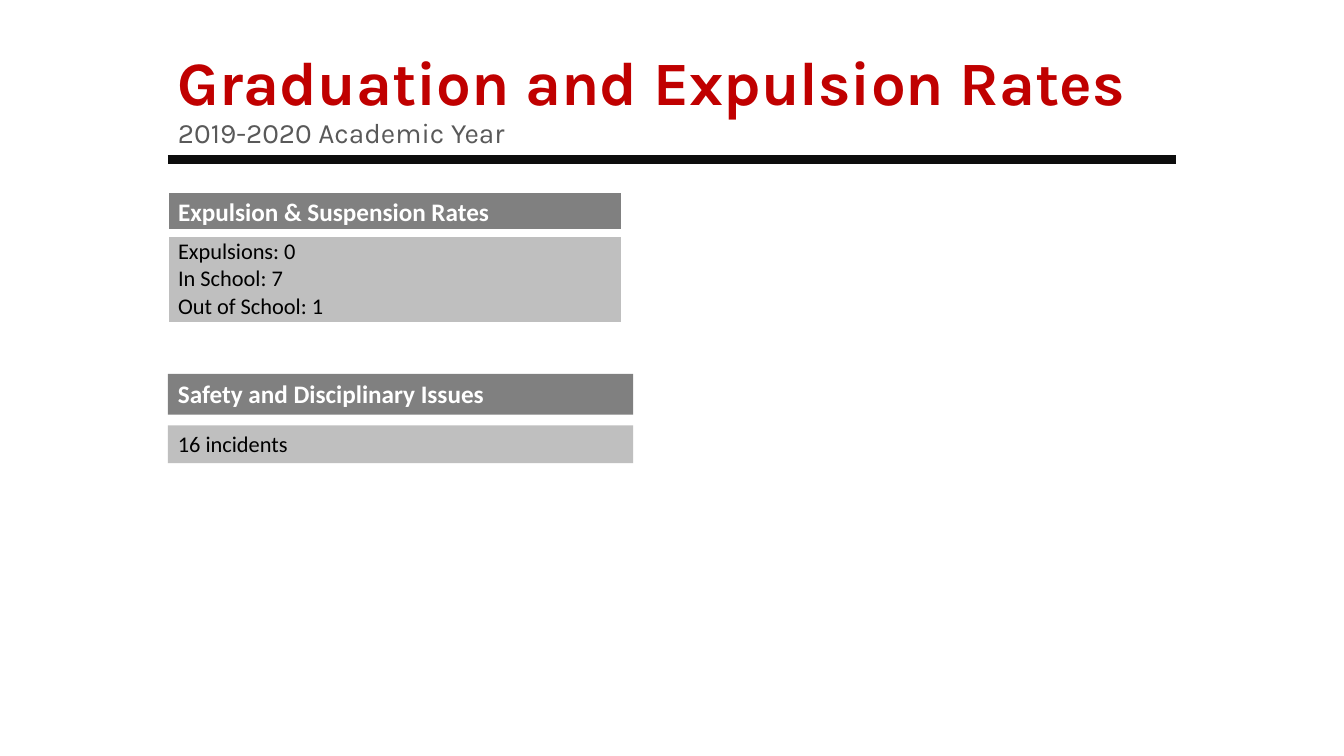
from dataclasses import dataclass

from lxml.etree import SubElement
from pptx import Presentation
from pptx.dml.color import RGBColor
from pptx.enum.shapes import MSO_CONNECTOR as Connector, MSO_SHAPE as Preset
from pptx.enum.text import MSO_ANCHOR as Anchor, MSO_AUTO_SIZE as AutoSize, PP_ALIGN as Align
from pptx.oxml.ns import qn
from pptx.util import Emu, Pt


@dataclass(frozen=True)
class Theme:
    title_font: str = "Karla"
    body_font: str = "Calibri"
    red: str = "C00000"
    gray: str = "595959"
    rule: str = "0D0D0D"
    header_fill: str = "808080"
    body_fill: str = "BFBFBF"
    white: str = "FFFFFF"
    black: str = "000000"
    title_size: int = 44
    subtitle_size: int = 20
    header_size: int = 18
    body_size: int = 16


THEME = Theme()
LEFT = 160


def px(value):
    return Emu(value * 9525)


def color(code):
    return RGBColor.from_string(code)


def write_line(paragraph, text, font, size, code, bold=False):
    paragraph.alignment = Align.LEFT
    run = paragraph.add_run()
    run.text = text
    run.font.name = font
    run.font.size = Pt(size)
    run.font.bold = bold
    run.font.color.rgb = color(code)


def write_lines(frame, lines, is_header):
    for index, text in enumerate(lines):
        paragraph = frame.add_paragraph() if index else frame.paragraphs[0]
        if is_header:
            write_line(paragraph, text, THEME.body_font, THEME.header_size, THEME.white, True)
        else:
            write_line(paragraph, text, THEME.body_font, THEME.body_size, THEME.black)


def band_fill(is_header):
    return color(THEME.header_fill if is_header else THEME.body_fill)


def add_heading(slide, title, subtitle):
    frame = slide.shapes.add_textbox(px(LEFT), px(32), px(936), px(128)).text_frame
    frame.word_wrap = True
    frame.vertical_anchor = Anchor.MIDDLE
    first, second = frame.paragraphs[0], frame.add_paragraph()
    write_line(first, title, THEME.title_font, THEME.title_size, THEME.red, True)
    write_line(second, subtitle, THEME.title_font, THEME.subtitle_size, THEME.gray)
    for paragraph in (first, second):
        paragraph.line_spacing = 0.9


def add_rule(slide, top):
    rule = slide.shapes.add_connector(
        Connector.STRAIGHT, px(LEFT), px(top), px(LEFT + 960), px(top))
    rule.line.color.rgb = color(THEME.rule)
    rule.line.width = Pt(6)
    SubElement(rule.element.spPr, qn("a:effectLst"))


def set_borders(cell, widths):
    properties = cell._tc.get_or_add_tcPr()
    for side, width in widths.items():
        line = SubElement(properties, qn(f"a:ln{side}"), w=str(Pt(width)))
        fill = SubElement(line, qn("a:solidFill"))
        SubElement(fill, qn("a:srgbClr"), val=THEME.white)


def add_rates_table(slide, top, rows):
    heights = (39, 88)
    table = slide.shapes.add_table(
        len(rows), 1, px(LEFT), px(top), px(432), px(sum(heights))).table
    table.horz_banding = False
    for index, (lines, height) in enumerate(zip(rows, heights)):
        is_header = index == 0
        table.rows[index].height = px(height)
        cell = table.cell(index, 0)
        set_borders(cell, {"L": 1, "R": 1, "T": 1 if is_header else 6, "B": 6})
        cell.fill.solid()
        cell.fill.fore_color.rgb = band_fill(is_header)
        cell.vertical_anchor = Anchor.MIDDLE if is_header else Anchor.TOP
        write_lines(cell.text_frame, lines, is_header)


def add_band(slide, top, height, text, is_header=False):
    band = slide.shapes.add_shape(Preset.RECTANGLE, px(LEFT), px(top), px(443), px(height))
    band.shadow.inherit = False
    band.fill.solid()
    band.fill.fore_color.rgb = band_fill(is_header)
    band.line.fill.background()
    frame = band.text_frame
    frame.word_wrap = True
    frame.auto_size = AutoSize.SHAPE_TO_FIT_TEXT
    frame.vertical_anchor = Anchor.TOP
    write_lines(frame, [text], is_header)


def main():
    presentation = Presentation()
    presentation.slide_width, presentation.slide_height = px(1280), px(720)
    slide = presentation.slides.add_slide(presentation.slide_layouts[6])

    # Heading
    add_heading(slide, "Graduation and Expulsion Rates", "2019-2020 Academic Year")
    add_rule(slide, 152)

    # Expulsions and suspensions
    add_rates_table(slide, 183, [
        ["Expulsion & Suspension Rates"],
        ["Expulsions: 0", "In School: 7", "Out of School: 1"],
    ])

    # Safety
    add_band(slide, 356, 39, "Safety and Disciplinary Issues", is_header=True)
    add_band(slide, 405, 36, "16 incidents")

    presentation.save("out.pptx")


if __name__ == "__main__":
    main()
